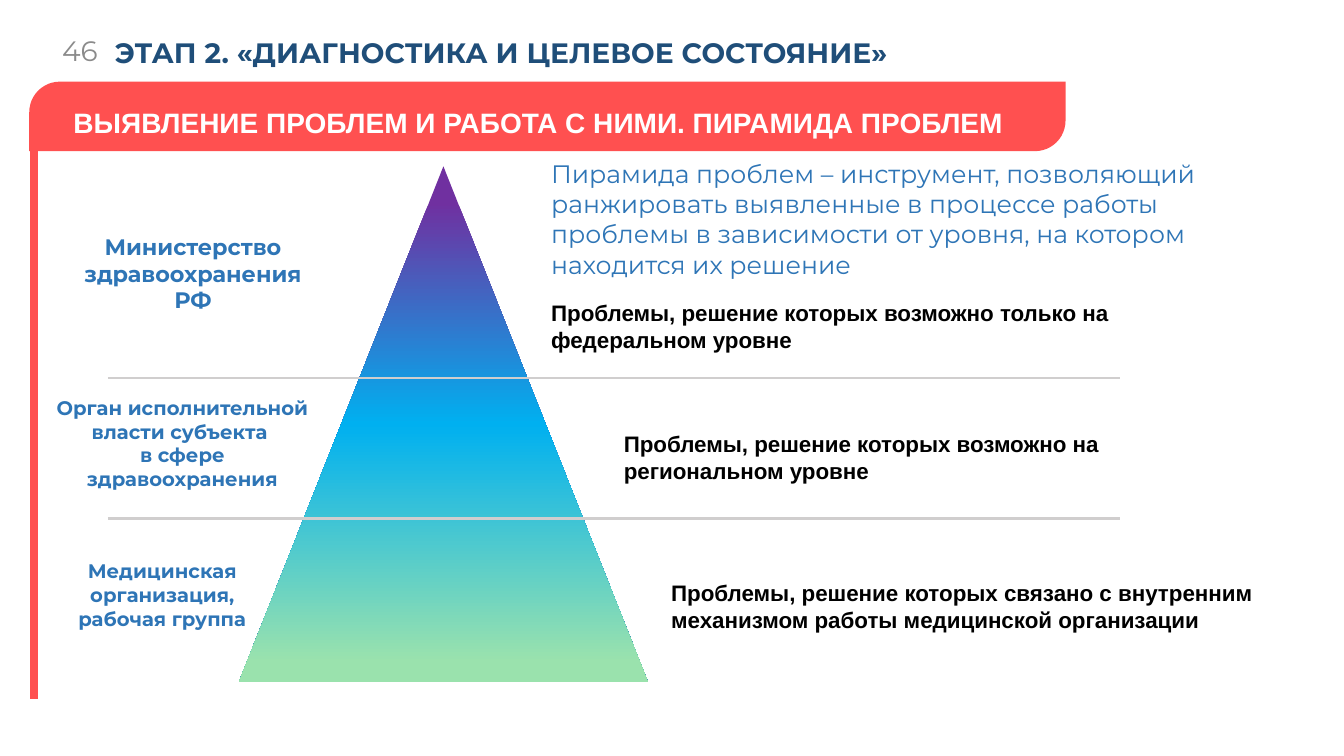
from typing import NamedTuple

from lxml import etree
from pptx import Presentation
from pptx.dml.color import RGBColor
from pptx.enum.shapes import MSO_CONNECTOR, MSO_SHAPE
from pptx.enum.text import MSO_ANCHOR, MSO_AUTO_SIZE, PP_ALIGN
from pptx.oxml.ns import qn
from pptx.util import Pt

LEFT, MID, RIGHT = PP_ALIGN.LEFT, PP_ALIGN.CENTER, PP_ALIGN.RIGHT
TOP, CENTRE = MSO_ANCHOR.TOP, MSO_ANCHOR.MIDDLE
NO_FIT = MSO_AUTO_SIZE.NONE
STRAIGHT = MSO_CONNECTOR.STRAIGHT
BANNER, PEAK = MSO_SHAPE.ROUND_2_DIAG_RECTANGLE, MSO_SHAPE.ISOSCELES_TRIANGLE

BRAND, PLAIN = "Montserrat", "Arial"
RED, BLUE, NAVY = "FF5050", "2E75B6", "1F4E79"
GREY, RULE, BLACK, WHITE = "8B8B8B", "D0CECE", "000000", "FFFFFF"


class Box(NamedTuple):
    left: float
    top: float
    width: float
    height: float


class Level(NamedTuple):
    owner: str
    place: Box
    size: int
    issue: str
    spot: Box


class Stop(NamedTuple):
    share: int
    tint: str


LEVELS = [
    Level("Министерство\nздравоохранения РФ", Box(43.2, 162.7, 189.4, 65.5), 16,
          "Проблемы, решение которых возможно только на федеральном уровне",
          Box(386.6, 210.2, 450.7, 46.1)),
    Level("Орган исполнительной власти субъекта \vв сфере здравоохранения",
          Box(24.5, 279.4, 211.7, 74.9), 14,
          "Проблемы, решение которых возможно на региональном уровне",
          Box(438.5, 303.8, 385.2, 46.1)),
    Level("Медицинская организация, рабочая группа",
          Box(35.3, 396, 161.3, 58.3), 14,
          "Проблемы, решение которых связано с внутренним "
          "механизмом работы медицинской организации",
          Box(472.3, 410.4, 447.8, 46.1)),
]
STOPS = [Stop(7, "7030A0"), Stop(50, "00B0F0"), Stop(96, "9AE2AD")]
CUTS = [270, 370.1]


def color(code: str) -> RGBColor:
    return RGBColor.from_string(code)


def place(shape, box: Box) -> None:
    shape.left, shape.top, shape.width, shape.height = map(Pt, box)


def write(shape, text: str, *, size: int, tint: str, font: str = BRAND,
          bold: bool = False, align=LEFT, anchor=TOP) -> None:
    frame = shape.text_frame
    frame.text = text
    frame.word_wrap = True
    frame.auto_size = NO_FIT
    frame.vertical_anchor = anchor
    for para in frame.paragraphs:
        para.alignment = align
        for run in para.runs:
            run.font.name = font
            run.font.size = Pt(size)
            run.font.bold = bold
            run.font.color.rgb = color(tint)


def label(slide, box: Box, text: str, **style) -> None:
    write(slide.shapes.add_textbox(*map(Pt, box)), text, **style)


def line(slide, x1: float, y1: float, x2: float, y2: float,
         tint: str, width: float) -> None:
    link = slide.shapes.add_connector(STRAIGHT, Pt(x1), Pt(y1), Pt(x2), Pt(y2))
    link.line.color.rgb = color(tint)
    link.line.width = Pt(width)
    etree.SubElement(link._element.spPr, qn("a:effectLst"))


def block(slide, kind, box: Box):
    """Add a preset shape with no outline or shadow."""
    shape = slide.shapes.add_shape(kind, *map(Pt, box))
    shape.shadow.inherit = False
    shape.line.fill.background()
    return shape


def blend(shape, stops: list[Stop]) -> None:
    """Fill a shape with a gradient running from top to bottom."""
    shape.fill.gradient()
    shape.fill.gradient_angle = 270
    ramp = shape._element.spPr.find(qn("a:gradFill")).find(qn("a:gsLst"))
    for old in list(ramp):
        ramp.remove(old)
    for stop in stops:
        node = etree.SubElement(ramp, qn("a:gs"), pos=str(stop.share * 1000))
        etree.SubElement(node, qn("a:srgbClr"), val=stop.tint)


def main() -> None:
    deck = Presentation()
    deck.slide_width, deck.slide_height = Pt(960), Pt(540)
    slide = deck.slides.add_slide(deck.slide_layouts[5])

    banner = block(slide, BANNER, Box(20.9, 58.3, 740.2, 49.7))
    banner.adjustments[0], banner.adjustments[1] = 0.44, 0
    banner.fill.solid()
    banner.fill.fore_color.rgb = color(RED)
    line(slide, 24.5, 98.6, 24.5, 499, RED, 6)

    title = slide.shapes.title
    place(title, Box(74.9, 18, 794.9, 38.9))
    write(title, "ЭТАП 2. «ДИАГНОСТИКА И ЦЕЛЕВОЕ СОСТОЯНИЕ»",
          size=20, tint=NAVY, bold=True, anchor=CENTRE)
    label(slide, Box(0, 16.6, 77, 38.9), "46",
          size=20, tint=GREY, align=RIGHT, anchor=CENTRE)
    label(slide, Box(45.4, 72, 698.4, 31.7),
          "ВЫЯВЛЕНИЕ ПРОБЛЕМ И РАБОТА С НИМИ. ПИРАМИДА ПРОБЛЕМ",
          size=20, tint=WHITE, font=PLAIN, bold=True)
    label(slide, Box(386.6, 109.4, 533.5, 94.3),
          "Пирамида проблем – инструмент, позволяющий ранжировать выявленные "
          "в процессе работы проблемы в зависимости от уровня, на котором "
          "находится их решение", size=18, tint=BLUE)

    blend(block(slide, PEAK, Box(170.6, 118.8, 292.3, 368.6)), STOPS)
    for cut in CUTS:
        line(slide, 77, cut, 799.9, cut, RULE, 2)
    for level in LEVELS:
        label(slide, level.spot, level.issue,
              size=16, tint=BLACK, font=PLAIN, bold=True)
        label(slide, level.place, level.owner,
              size=level.size, tint=BLUE, bold=True, align=MID)

    deck.save("out.pptx")


if __name__ == "__main__":
    main()
